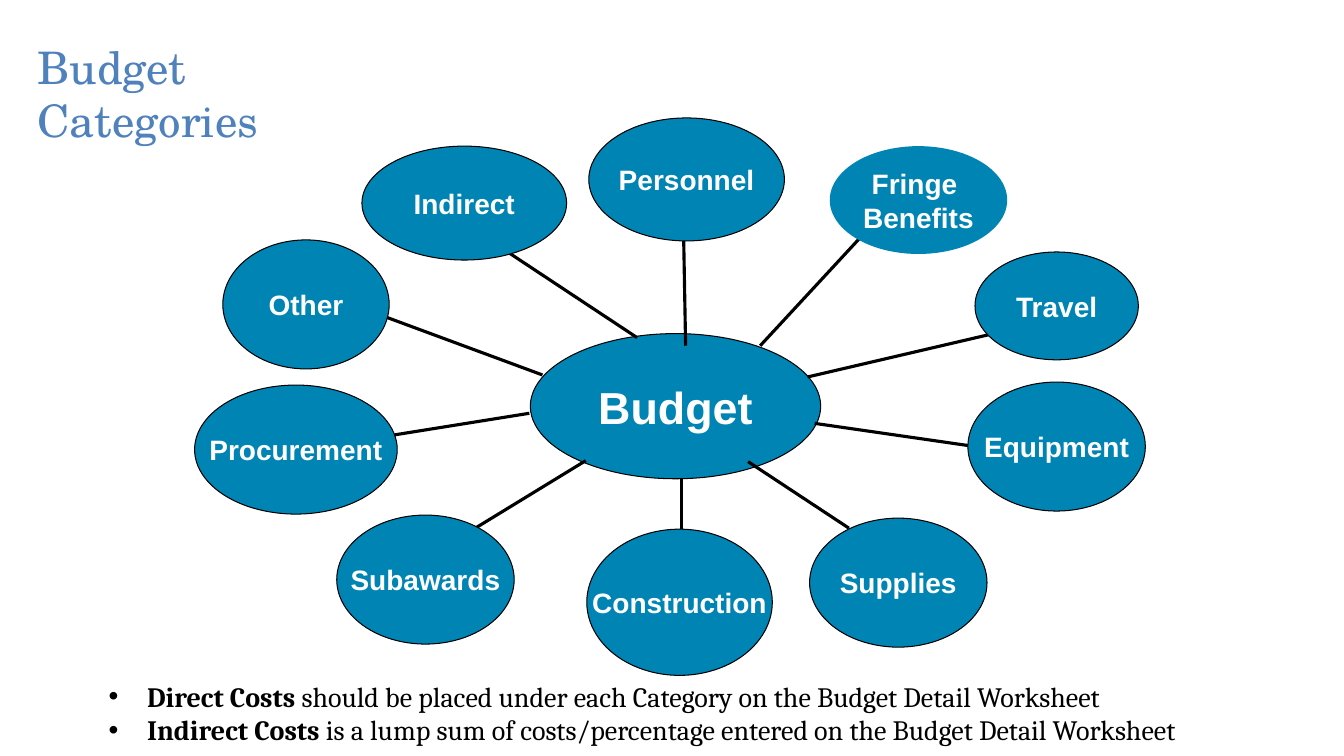
from dataclasses import dataclass

from lxml import etree
from pptx import Presentation
from pptx.dml.color import RGBColor
from pptx.enum.shapes import MSO_CONNECTOR, MSO_SHAPE
from pptx.enum.text import MSO_ANCHOR, MSO_AUTO_SIZE, PP_ALIGN
from pptx.oxml.ns import qn
from pptx.util import Pt

OVAL = MSO_SHAPE.OVAL
STRAIGHT = MSO_CONNECTOR.STRAIGHT
TOP, MIDDLE = MSO_ANCHOR.TOP, MSO_ANCHOR.MIDDLE
LEFT, CENTER = PP_ALIGN.LEFT, PP_ALIGN.CENTER
FIXED = MSO_AUTO_SIZE.NONE
GROW = MSO_AUTO_SIZE.SHAPE_TO_FIT_TEXT

SCALE = 9144  # EMU per px, 100 px to the inch
TEAL, BLUE, BLACK, WHITE = "0084B4", "4F81BD", "000000", "FFFFFF"
INDENT = 38


@dataclass
class Node:
    text: str
    box: tuple[int, int, int, int]
    spoke: tuple[int, int, int, int] | None = None
    size: int = 20
    edge: bool = True


HUB = Node("Budget", (526, 331, 288, 144), size=32)
NODES = [
    Node("Personnel", (584, 117, 194, 122), (680, 343, 678, 232)),
    Node("Indirect", (359, 145, 203, 113), (632, 335, 502, 249)),
    Node("Other", (221, 238, 165, 128), (538, 372, 384, 315)),
    Node("Procurement", (193, 382, 201, 128), (525, 410, 369, 435)),
    Node("Subawards", (334, 511, 176, 128), (581, 457, 473, 523)),
    Node("Construction", (582, 525, 184, 145), (676, 475, 676, 525)),
    Node("Supplies", (803, 514, 176, 128), (742, 458, 842, 524)),
    Node("Equipment", (960, 379, 176, 128), (808, 420, 960, 442)),
    Node("Travel", (967, 250, 162, 107), (801, 374, 981, 332)),
    Node("Fringe \nBenefits", (823, 145, 176, 107), (754, 343, 853, 236),
         edge=False),
]
NOTES = [
    [("Direct Costs ", True),
     ("should be placed under each Category on the Budget Detail Worksheet",
      False)],
    [("Indirect Costs ", True),
     ("is a lump sum of costs/percentage entered on the Budget Detail "
      "Worksheet", False)],
]


def px(*nums: int) -> list[int]:
    return [num * SCALE for num in nums]


def color(code: str) -> RGBColor:
    return RGBColor.from_string(code)


def plain(text: str, bold: bool = False) -> list:
    """Split text into one single-run paragraph per line."""
    return [[(line, bold)] for line in text.split("\n")]


def write(frame, lines: list, *, font: str, size: int, ink: str,
          align=LEFT, anchor=TOP, wrap: bool = True, fit=FIXED,
          bullet: str = "") -> None:
    frame.word_wrap = wrap
    frame.auto_size = fit
    frame.vertical_anchor = anchor
    for i, runs in enumerate(lines):
        para = frame.add_paragraph() if i else frame.paragraphs[0]
        para.alignment = align
        if bullet:
            props = para._p.get_or_add_pPr()
            props.set("marL", str(INDENT * SCALE))
            props.set("indent", str(-INDENT * SCALE))
            etree.SubElement(props, qn("a:buFont"), typeface="Arial")
            etree.SubElement(props, qn("a:buChar"), char=bullet)
        for text, bold in runs:
            run = para.add_run()
            run.text = text
            run.font.name = font
            run.font.size = Pt(size)
            run.font.bold = bold
            run.font.color.rgb = color(ink)


def draw_spoke(slide, ends: tuple[int, int, int, int]) -> None:
    spoke = slide.shapes.add_connector(STRAIGHT, *px(*ends))
    spoke.line.color.rgb = color(BLACK)
    spoke.line.width = Pt(2.25)
    etree.SubElement(spoke._element.spPr, qn("a:effectLst"))


def draw_node(slide, node: Node) -> None:
    if node.spoke:
        draw_spoke(slide, node.spoke)
    oval = slide.shapes.add_shape(OVAL, *px(*node.box))
    oval.shadow.inherit = False
    oval.fill.solid()
    oval.fill.fore_color.rgb = color(TEAL)
    if node.edge:
        oval.line.color.rgb = color(BLACK)
        oval.line.width = Pt(0.75)
    else:
        oval.line.fill.background()
    write(oval.text_frame, plain(node.text, True), font="Arial",
          size=node.size, ink=WHITE, align=CENTER, anchor=MIDDLE, wrap=False)


def main() -> None:
    deck = Presentation()
    deck.slide_width, deck.slide_height = px(1333, 750)
    slide = deck.slides.add_slide(deck.slide_layouts[5])

    title = slide.shapes.title
    title.left, title.top, title.width, title.height = px(27, 34, 940, 144)
    write(title.text_frame, plain("Budget\nCategories"),
          font="TeX Gyre Schola", size=32, ink=BLUE)

    for node in [HUB, *NODES]:
        draw_node(slide, node)

    notes = slide.shapes.add_textbox(*px(98, 669, 1235, 77))
    write(notes.text_frame, NOTES, font="Cambria", size=20, ink=BLACK,
          fit=GROW, bullet="•")
    deck.save("out.pptx")


if __name__ == "__main__":
    main()
